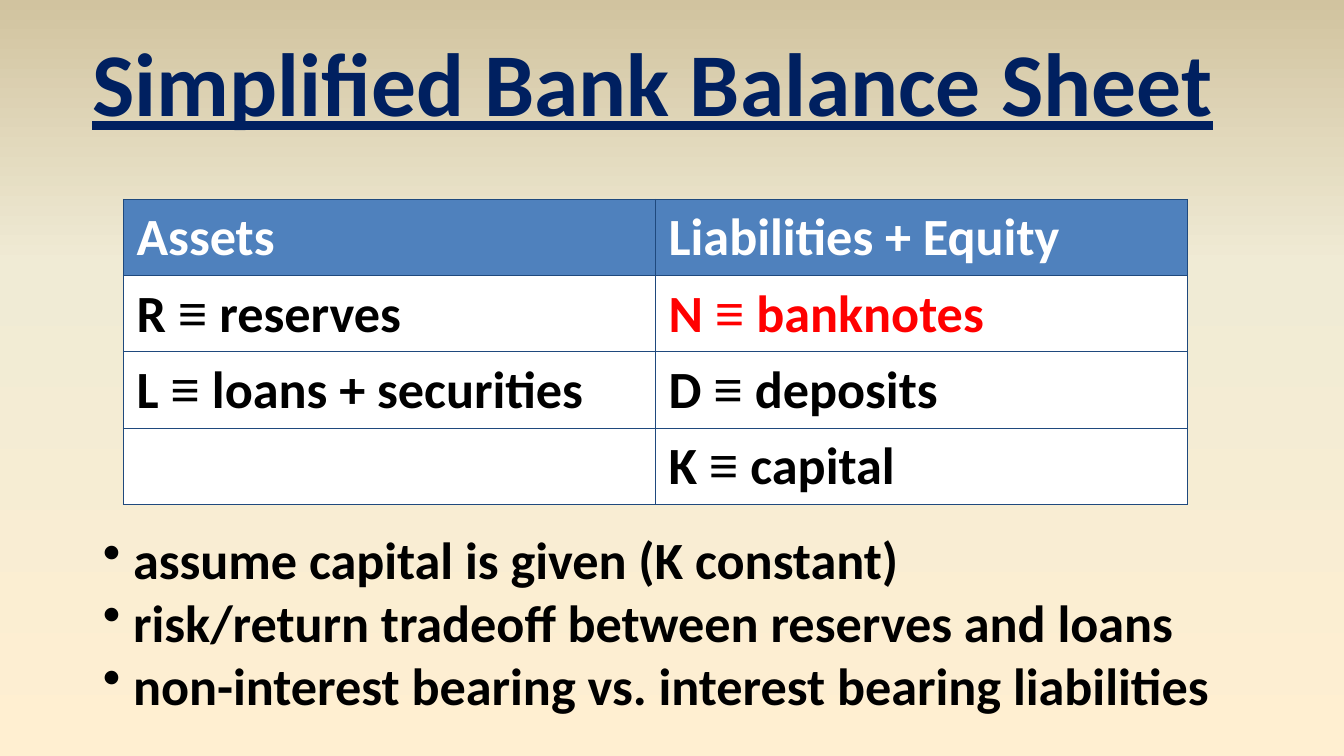
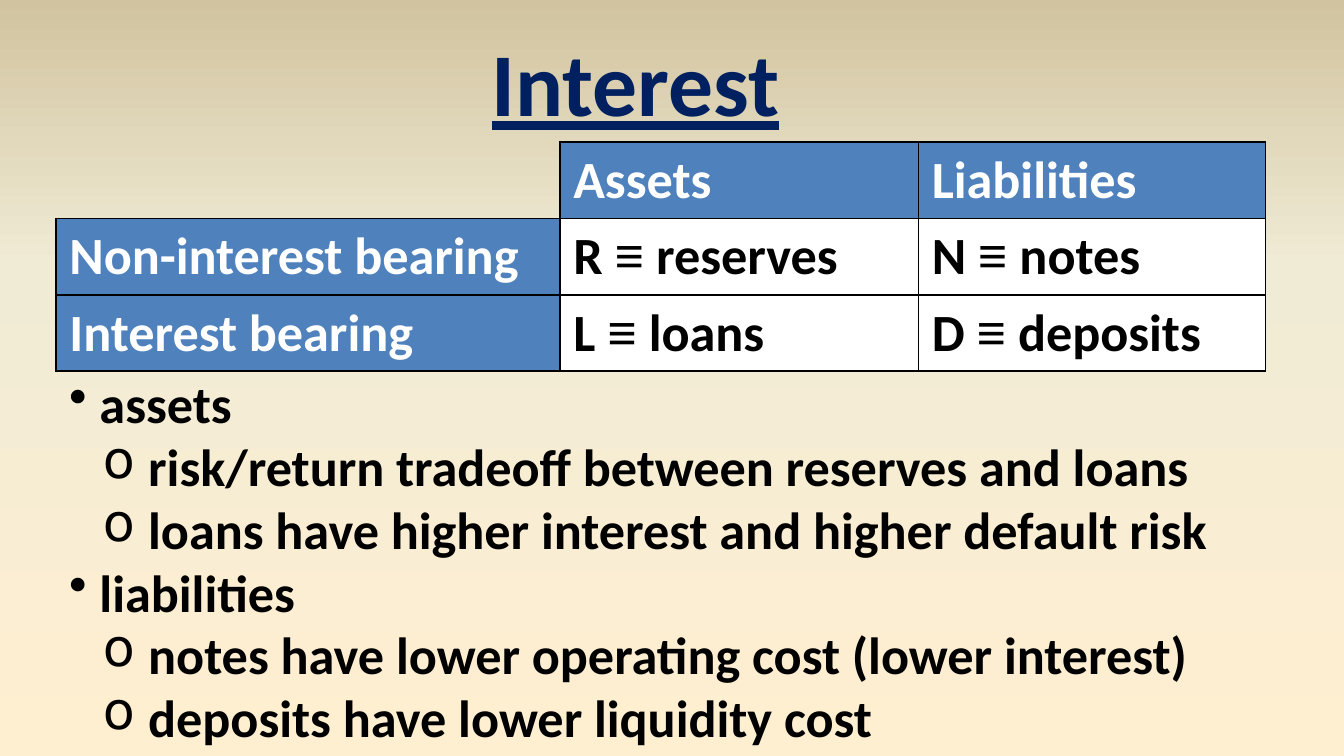
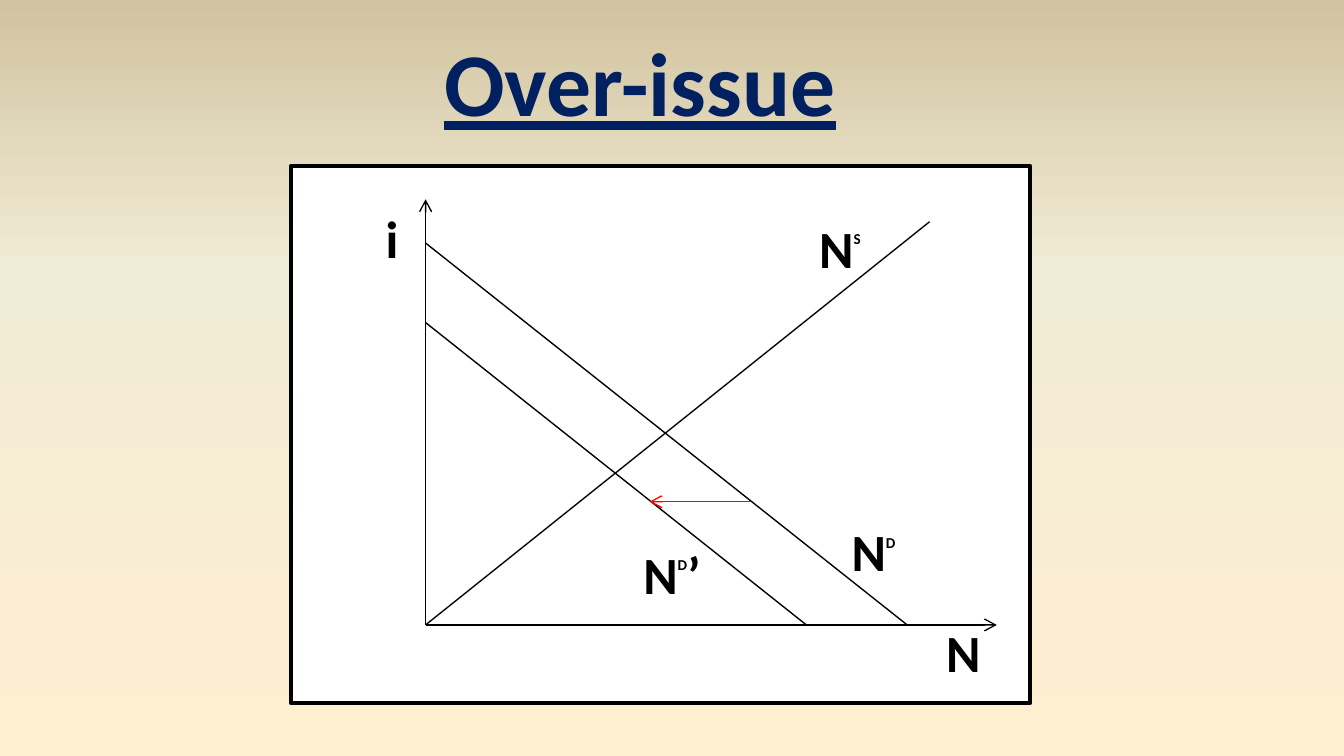
from dataclasses import dataclass
from itertools import groupby

from pptx import Presentation, oxml
from pptx import util as u
from pptx.dml import color
from pptx.enum import shapes, text
from pptx.oxml import ns

COLUMNS, ROWS = 120, 67.5
UNIT = u.Inches(10) / COLUMNS

NAVY, BLUE, EDGE = "002060", "4F81BD", "1F497D"
BLACK, WHITE, RED = "000000", "FFFFFF", "FF0000"
BACKDROP = ((0, "FFEFD1"), (65, "F0EBD5"), (100, "D1C39F"))
FONT, SYMBOL_FONT, SYMBOL = "Calibri", "Times New Roman", "≡"
BODY_SIZE, RAISED_SIZE = 28, 14
ROW_HEIGHT = 6.8
LABEL_WIDTH, LABEL_HEIGHT = 8, 6.8


@dataclass(frozen=True)
class Area:
    left: float
    top: float
    width: float
    height: float

    def lengths(self) -> tuple:
        return tuple(grid(n) for n in (self.left, self.top, self.width, self.height))


@dataclass(frozen=True)
class Cell:
    words: str
    ink: str = BLACK
    fill: str | None = WHITE
    sides: str = "LRTB"


@dataclass(frozen=True)
class Bullet:
    words: str
    level: int = 0


@dataclass(frozen=True)
class Label:
    left: float
    top: float
    base: str
    raised: str = ""
    tail: str = ""


@dataclass(frozen=True)
class Line:
    start: tuple[float, float]
    end: tuple[float, float]
    ink: str = BLACK
    arrow: bool = False


def grid(count: float) -> int:
    return round(count * UNIT)


def rgb(value: str):
    return color.RGBColor.from_string(value)


def add_xml(parent, tag: str, inner: str = "", **attributes):
    settings = " ".join(f'{key}="{value}"' for key, value in attributes.items())
    child = oxml.parse_xml(f"<{tag} {ns.nsdecls('a', 'p')} {settings}>{inner}</{tag}>")
    parent.append(child)
    return child


def write(para, words: str, size=BODY_SIZE, ink=BLACK, underline=None, raise_by=0) -> None:
    for is_symbol, letters in groupby(words, lambda letter: letter == SYMBOL):
        span = para.add_run()
        span.text = "".join(letters)
        font = span.font
        font.name = SYMBOL_FONT if is_symbol else FONT
        font.size, font.bold, font.underline = u.Pt(size), True, underline
        font.color.rgb = rgb(ink)
        if raise_by:
            span._r.get_or_add_rPr().set("baseline", str(raise_by * 1000))


def add_box(page, area: Area, wrap=True, align=None):
    box = page.shapes.add_textbox(*area.lengths())
    frame = box.text_frame
    frame.word_wrap = wrap
    frame.auto_size = text.MSO_AUTO_SIZE.SHAPE_TO_FIT_TEXT
    frame.paragraphs[0].alignment = align
    return frame


def add_page(deck, title: str, left: float, width: float):
    page = deck.slides.add_slide(deck.slide_layouts[6])
    fill = page.background.fill
    fill.gradient()
    gradient = page.element.find(".//" + ns.qn("a:gradFill"))
    for child in list(gradient):
        gradient.remove(child)
    stops = "".join(f'<a:gs pos="{share * 1000}"><a:srgbClr val="{ink}"/></a:gs>'
                    for share, ink in BACKDROP)
    add_xml(gradient, "a:gsLst", stops)
    add_xml(gradient, "a:lin", ang=270 * 60000, scaled=0)
    frame = add_box(page, Area(left, 1.8, width, 10.9), False, text.PP_ALIGN.CENTER)
    write(frame.paragraphs[0], title, size=48, ink=NAVY, underline=True)
    return page


def add_borders(cell, sides: str, ink: str, points: float) -> None:
    properties = cell._tc.get_or_add_tcPr()
    fills = list(properties)
    for side in "LRTB":
        paint = (f'<a:solidFill><a:srgbClr val="{ink}"/></a:solidFill>'
                 if side in sides else "<a:noFill/>")
        add_xml(properties, f"a:ln{side}", paint, w=int(u.Pt(points)))
    properties.extend(fills)


def add_grid(page, left: float, top: float, widths: list[float],
             rows: list[list[Cell]], ink: str, points: float) -> None:
    area = Area(left, top, sum(widths), ROW_HEIGHT * len(rows))
    table = page.shapes.add_table(len(rows), len(widths), *area.lengths()).table
    table.first_row = table.horz_banding = False
    for column, width in zip(table.columns, widths):
        column.width = grid(width)
    for row, entries in zip(table.rows, rows):
        row.height = grid(ROW_HEIGHT)
        for cell, entry in zip(row.cells, entries):
            write(cell.text_frame.paragraphs[0], entry.words, ink=entry.ink)
            if entry.fill:
                cell.fill.solid()
                cell.fill.fore_color.rgb = rgb(entry.fill)
            else:
                cell.fill.background()
            add_borders(cell, entry.sides, ink, points)


def add_bullets(page, area: Area, bullets: list[Bullet]) -> None:
    frame = add_box(page, area)
    for index, bullet in enumerate(bullets):
        para = frame.add_paragraph() if index else frame.paragraphs[0]
        para.level = bullet.level
        properties = para._p.get_or_add_pPr()
        properties.set("marL", str(grid(6 * bullet.level)))
        properties.set("indent", str(grid(-3 * bullet.level)))
        add_xml(properties, "a:buChar", char="•o"[bullet.level])
        write(para, " " + bullet.words)


def add_label(page, label: Label) -> None:
    area = Area(label.left, label.top, LABEL_WIDTH, LABEL_HEIGHT)
    para = add_box(page, area, align=text.PP_ALIGN.CENTER).paragraphs[0]
    write(para, label.base)
    write(para, label.raised, size=RAISED_SIZE, raise_by=90)
    write(para, label.tail)


def add_line(page, line: Line) -> None:
    ends = [grid(n) for n in (*line.start, *line.end)]
    connector = page.shapes.add_connector(shapes.MSO_CONNECTOR.STRAIGHT, *ends)
    connector.line.width = u.Pt(0.75)
    connector.line.color.rgb = rgb(line.ink)
    if line.arrow:
        add_xml(connector.line._get_or_add_ln(), "a:tailEnd", type="arrow")
    add_xml(connector.element.spPr, "a:effectLst")


def header(words: str) -> Cell:
    return Cell(words, WHITE, BLUE)


def build_balance_sheet(deck) -> None:
    page = add_page(deck, "Simplified Bank Balance Sheet", 6.5, 103.6)
    add_grid(page, 11, 17.8, [47.5, 47.5], [
        [header("Assets"), header("Liabilities + Equity")],
        [Cell("R ≡ reserves"), Cell("N ≡ banknotes", RED)],
        [Cell("L ≡ loans + securities"), Cell("D ≡ deposits")],
        [Cell(""), Cell("K ≡ capital")],
    ], EDGE, 0.5)
    add_bullets(page, Area(8, 46.5, 103, 18.1), [
        Bullet("assume capital is given (K constant)"),
        Bullet("risk/return tradeoff between reserves and loans"),
        Bullet("non-interest bearing vs. interest bearing liabilities"),
    ])


def build_interest(deck) -> None:
    page = add_page(deck, "Interest", 42.6, 28.3)
    add_grid(page, 5, 12.7, [45, 32, 31], [
        [Cell("", fill=None, sides="RB"), header("Assets"), header("Liabilities")],
        [header("Non-interest bearing"), Cell("R ≡ reserves"), Cell("N ≡ notes")],
        [header("Interest bearing"), Cell("L ≡ loans"), Cell("D ≡ deposits")],
    ], BLACK, 1)
    add_bullets(page, Area(5, 32.6, 111, 35.2), [
        Bullet("assets"),
        Bullet("risk/return tradeoff between reserves and loans", 1),
        Bullet("loans have higher interest and higher default risk", 1),
        Bullet("liabilities"),
        Bullet("notes have lower operating cost (lower interest)", 1),
        Bullet("deposits have lower liquidity cost", 1),
    ])


def build_over_issue(deck) -> None:
    page = add_page(deck, "Over-issue", 38.2, 37.9)
    panel = page.shapes.add_shape(shapes.MSO_SHAPE.RECTANGLE,
                                  *Area(26, 14.8, 66, 48).lengths())
    panel.shadow.inherit = False
    panel.fill.solid()
    panel.fill.fore_color.rgb = rgb(WHITE)
    panel.line.color.rgb = rgb(BLACK)
    panel.line.width = u.Pt(2)

    axis, floor, shift_row = 38, 55.8, 44.8
    origin = (axis, floor)
    for line in (
        Line(origin, (axis, 17.8), arrow=True),
        Line(origin, (89, floor), arrow=True),
        Line((83, 19.8), origin),
        Line((axis, 21.7), (81, floor)),
        Line((axis, 28.8), (72, floor)),
        Line((67, shift_row), (58, shift_row), RED, True),
    ):
        add_line(page, line)
    for label in (
        Label(31, 17.8, "i"),
        Label(82, 54.8, "N"),
        Label(71, 18.7, "N", "S"),
        Label(74, 45.8, "N", "D"),
        Label(56, 47.8, "N", "D", "’"),
    ):
        add_label(page, label)


def main() -> None:
    deck = Presentation()
    deck.slide_width, deck.slide_height = grid(COLUMNS), grid(ROWS)
    for build in (build_balance_sheet, build_interest, build_over_issue):
        build(deck)
    deck.save("out.pptx")


if __name__ == "__main__":
    main()
